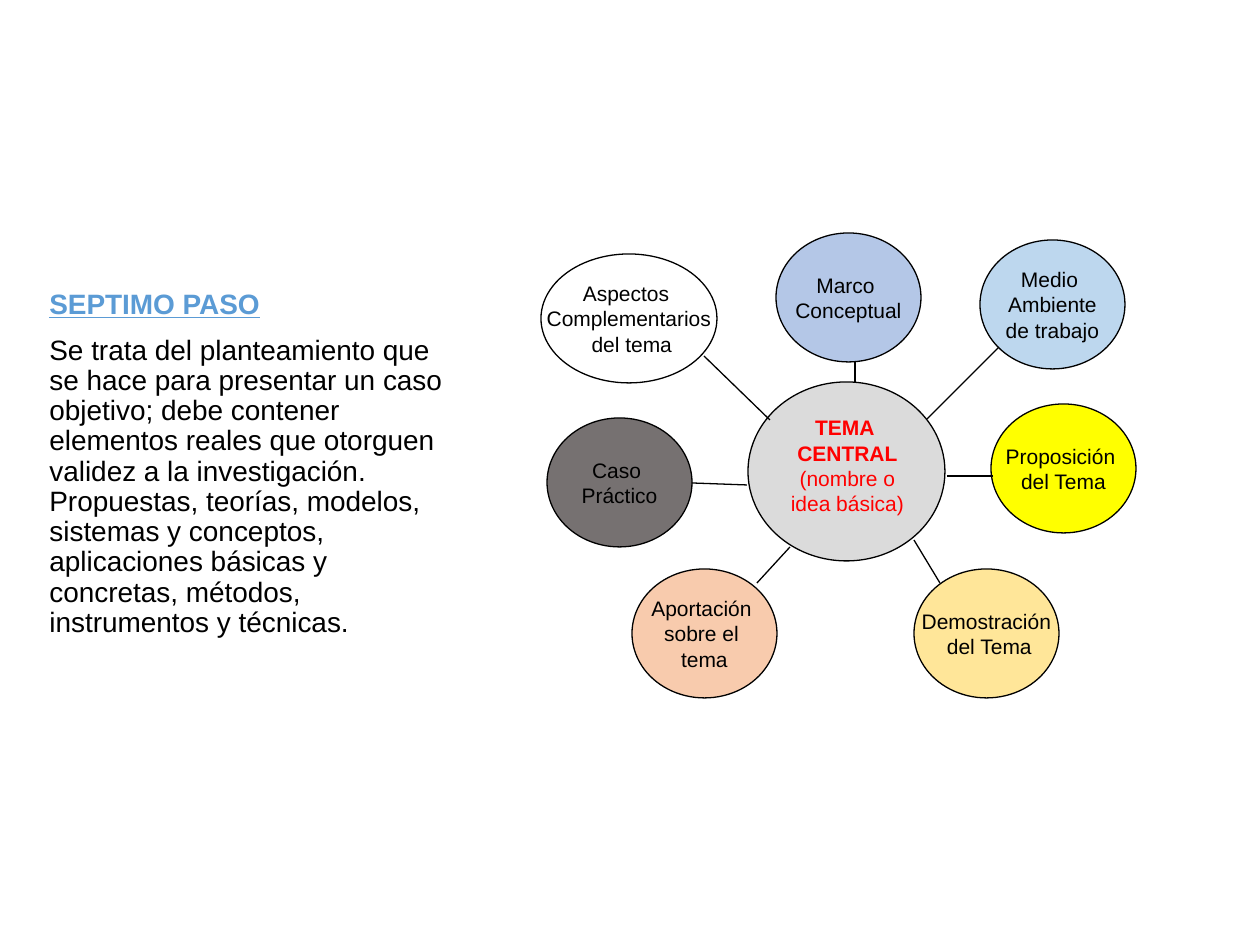
from dataclasses import dataclass

from lxml.etree import SubElement
from pptx import Presentation
from pptx.dml.color import RGBColor
from pptx.enum.shapes import MSO_CONNECTOR, MSO_SHAPE
from pptx.enum.text import MSO_ANCHOR, MSO_AUTO_SIZE, PP_ALIGN
from pptx.oxml.ns import qn
from pptx.util import Emu, Pt

EMU_PER_PX = 914400 // 126


@dataclass(frozen=True)
class Theme:
    """Colours, font and type sizes of the slide."""
    font: str = "Arial"
    body_size: int = 16
    label_size: int = 12
    line_width: float = 0.75
    black: str = "000000"
    heading: str = "5B9BD5"
    centre_text: str = "FF0000"
    centre_fill: str = "DBDBDB"
    yellow: str = "FFFF00"
    sky: str = "BDD7EE"
    gold: str = "FFE699"
    periwinkle: str = "B4C7E7"
    peach: str = "F8CBAD"
    grey: str = "767171"


THEME = Theme()
HEADING = "SEPTIMO PASO"
BODY = (
    "Se trata del planteamiento que se hace para presentar un caso objetivo; "
    "debe contener elementos reales que otorguen validez a la investigación. "
    "Propuestas, teorías, modelos, sistemas y conceptos, aplicaciones básicas "
    "y concretas, métodos, instrumentos y técnicas."
)
CENTRE_LINES = "TEMA \nCENTRAL\n(nombre o\nidea básica)"
TOPIC_WIDTH, TOPIC_HEIGHT = 145, 129
TOPICS = [
    ("Aspectos \nComplementarios\n del tema", 541, 254, 176, None),
    ("Proposición \ndel Tema", 991, 404, TOPIC_WIDTH, THEME.yellow),
    ("Medio \nAmbiente\nde trabajo", 980, 240, TOPIC_WIDTH, THEME.sky),
    ("Demostración\n del Tema", 914, 569, TOPIC_WIDTH, THEME.gold),
    ("Marco \nConceptual", 776, 233, TOPIC_WIDTH, THEME.periwinkle),
    ("Aportación \nsobre el \ntema", 632, 569, TOPIC_WIDTH, THEME.peach),
    ("Caso \nPráctico", 547, 418, TOPIC_WIDTH, THEME.grey),
]
SPOKES = [
    (704, 356, 770, 420),
    (999, 347, 927, 419),
    (692, 483, 747, 485),
    (947, 476, 993, 476),
    (790, 547, 757, 583),
    (914, 540, 940, 583),
    (855, 361, 855, 383),
]


def px(*lengths):
    """Turn pixel lengths into EMU."""
    return [Emu(length * EMU_PER_PX) for length in lengths]


def style_paragraph(paragraph, size, color, bold=False, underline=False):
    """Format every run of a paragraph."""
    for run in paragraph.runs:
        font = run.font
        font.name, font.size = THEME.font, Pt(size)
        font.bold, font.underline = bold, underline
        font.color.rgb = RGBColor.from_string(color)


def set_label(text_frame, text, color, bold_lines=0):
    """Write centred label lines, the first of them bold if asked."""
    text_frame.margin_left, text_frame.margin_right = px(9, 9)
    text_frame.margin_top, text_frame.margin_bottom = px(5, 5)
    text_frame.text = text
    for index, paragraph in enumerate(text_frame.paragraphs):
        paragraph.alignment = PP_ALIGN.CENTER
        style_paragraph(paragraph, THEME.label_size, color, index < bold_lines)


def set_outline(line):
    """Give a shape or connector the thin black line."""
    line.color.rgb = RGBColor.from_string(THEME.black)
    line.width = Pt(THEME.line_width)


def add_ellipse(slide, left, top, width, height, fill):
    """Add an outlined ellipse, unfilled when fill is None."""
    shape = slide.shapes.add_shape(MSO_SHAPE.OVAL, *px(left, top, width, height))
    shape.shadow.inherit = False
    if fill is None:
        shape.fill.background()
    else:
        shape.fill.solid()
        shape.fill.fore_color.rgb = RGBColor.from_string(fill)
    set_outline(shape.line)
    return shape


def add_topic(slide, text, left, top, width, fill):
    """Add an ellipse with its topic label."""
    text_frame = add_ellipse(slide, left, top, width, TOPIC_HEIGHT, fill).text_frame
    text_frame.word_wrap = False
    text_frame.vertical_anchor = MSO_ANCHOR.MIDDLE
    set_label(text_frame, text, THEME.black)


def add_centre(slide):
    """Add the central ellipse and the text box over it."""
    add_ellipse(slide, 748, 382, 197, 179, THEME.centre_fill)
    text_frame = slide.shapes.add_textbox(*px(777, 410, 141, 111)).text_frame
    text_frame.word_wrap = True
    text_frame.auto_size = MSO_AUTO_SIZE.SHAPE_TO_FIT_TEXT
    set_label(text_frame, CENTRE_LINES, THEME.centre_text, bold_lines=2)


def add_spoke(slide, *ends):
    """Add a straight line between the centre and a topic."""
    connector = slide.shapes.add_connector(MSO_CONNECTOR.STRAIGHT, *px(*ends))
    set_outline(connector.line)
    SubElement(connector._element.spPr, qn("a:effectLst"))


def add_description(slide):
    """Add the heading and its explanation."""
    text_frame = slide.shapes.add_textbox(*px(37, 284, 422, 509)).text_frame
    text_frame.word_wrap = True
    text_frame.text = f"{HEADING}\n{BODY}"
    heading, body = text_frame.paragraphs
    style_paragraph(heading, THEME.body_size, THEME.heading, True, True)
    style_paragraph(body, THEME.body_size, THEME.black)
    heading.space_before, body.space_before = Pt(10), Pt(9)
    heading.line_spacing = body.line_spacing = 0.9


def main():
    """Build and save the slide."""
    presentation = Presentation()
    presentation.slide_width, presentation.slide_height = px(1260, 945)
    slide = presentation.slides.add_slide(presentation.slide_layouts[6])
    add_description(slide)
    add_centre(slide)
    for topic in TOPICS:
        add_topic(slide, *topic)
    for spoke in SPOKES:
        add_spoke(slide, *spoke)
    presentation.save("out.pptx")


if __name__ == "__main__":
    main()
